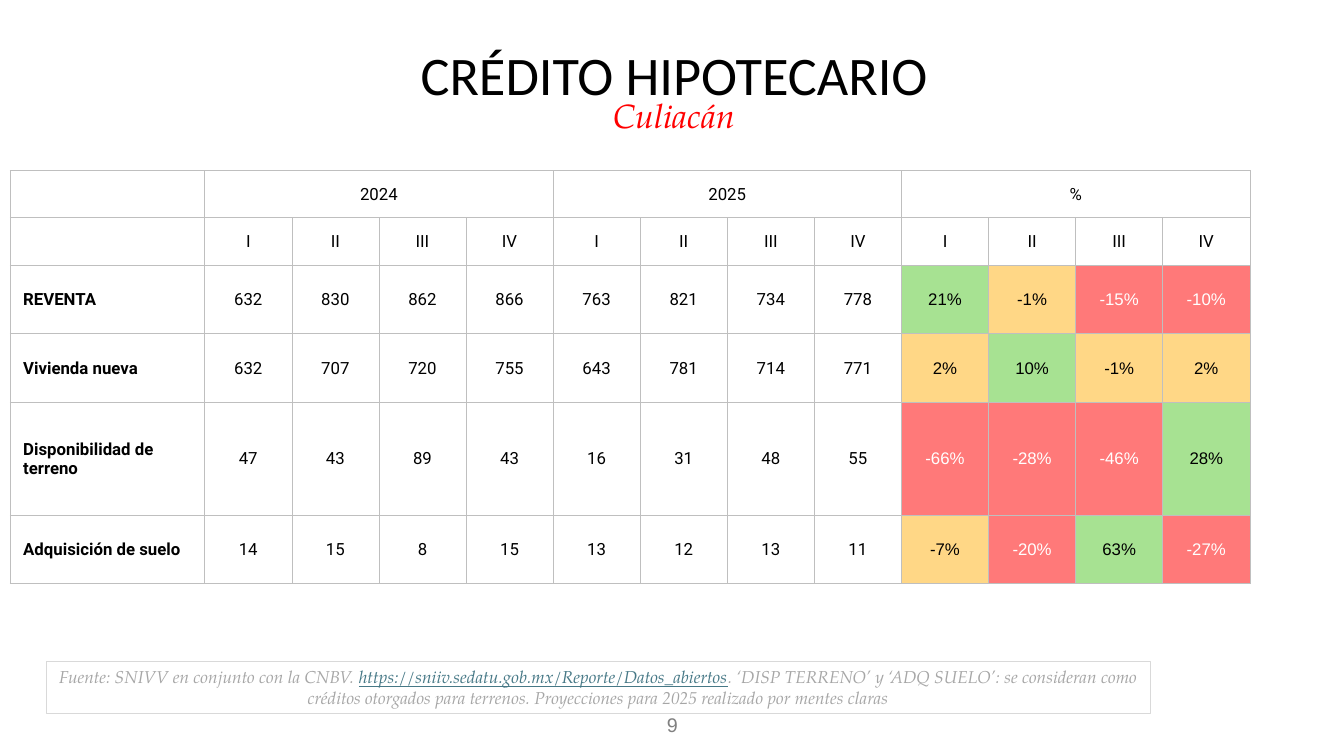
from itertools import product
from math import floor

from lxml.etree import SubElement
from pptx import Presentation
from pptx.dml.color import RGBColor
from pptx.enum.shapes import MSO_SHAPE
from pptx.enum.text import MSO_ANCHOR, PP_ALIGN
from pptx.oxml.ns import qn
from pptx.util import Inches, Pt

QUARTERS = ["I", "II", "III", "IV"]
GROUPS = ["2024", "2025", "%"]
CREDITS = {
    "REVENTA": ([632, 830, 862, 866], [763, 821, 734, 778]),
    "Vivienda nueva": ([632, 707, 720, 755], [643, 781, 714, 771]),
    "Disponibilidad de terreno": ([47, 43, 89, 43], [16, 31, 48, 55]),
    "Adquisición de suelo": ([14, 15, 8, 15], [13, 12, 13, 11]),
}
ROW_HEIGHTS = [0.47, 0.47, 0.68, 0.68, 1.12, 0.68]
LABEL_SHARE = 0.157
BLACK, WHITE, BORDER = "000000", "FFFFFF", "BFBFBF"
SERIF = {"name": "TeX Gyre Pagella", "italic": True}


def rgb(code):
    """Turn a hex string into a colour."""
    return RGBColor.from_string(code)


def add_run(paragraph, wording, color, **formats):
    """Append a run with the given colour and font attributes."""
    run = paragraph.add_run()
    run.text = wording
    run.font.color.rgb = rgb(color)
    for attribute, value in formats.items():
        setattr(run.font, attribute, value)


def add_line(slide, box, runs, anchor=MSO_ANCHOR.TOP, margins=(0.1, 0.05, 0.1, 0.05),
             spacing=1.0, border=None):
    """Place a centred paragraph in a box, outlined if a border is given."""
    frame_box = slide.shapes.add_shape(MSO_SHAPE.RECTANGLE, *map(Inches, box))
    frame_box.shadow.inherit = False
    frame_box.fill.background()
    if border:
        frame_box.line.color.rgb = rgb(border)
        frame_box.line.width = Pt(0.75)
    else:
        frame_box.line.fill.background()
    frame = frame_box.text_frame
    settings = dict(zip(("margin_left", "margin_top", "margin_right", "margin_bottom"),
                        map(Inches, margins)), word_wrap=True, vertical_anchor=anchor)
    for attribute, value in settings.items():
        setattr(frame, attribute, value)
    paragraph = frame.paragraphs[0]
    paragraph.alignment = PP_ALIGN.CENTER
    paragraph.line_spacing = spacing
    for wording, color, formats in runs:
        add_run(paragraph, wording, color, **formats)


def add_heading(slide, left, top, width):
    """Place the title and the city beneath it."""
    add_line(slide, (left, top, width, 0.57),
             [("CRÉDITO HIPOTECARIO", BLACK, {"name": "Calibri", "size": Pt(38.8)})],
             margins=(0.11, 0.06, 0.11, 0.06), spacing=0.7)
    add_line(slide, (left, top + 0.36, width, 0.5),
             [("Culiacán", "FF0000", {**SERIF, "size": Pt(24)})])


def border_cell(cell):
    """Draw a thin grey line on each side of a cell."""
    properties = cell._tc.get_or_add_tcPr()
    for side in ("a:lnL", "a:lnR", "a:lnT", "a:lnB"):
        line = SubElement(properties, qn(side), w=str(Pt(0.5)))
        SubElement(SubElement(line, qn("a:solidFill")), qn("a:srgbClr"), val=BORDER)


def fill_cell(cell, wording, color=BLACK, align=PP_ALIGN.CENTER, left=0.01, **formats):
    """Write a cell's wording, centred vertically."""
    settings = {"margin_left": Inches(left), "margin_top": Inches(0.01),
                "margin_right": Inches(0.01), "margin_bottom": 0,
                "vertical_anchor": MSO_ANCHOR.MIDDLE}
    for attribute, value in settings.items():
        setattr(cell, attribute, value)
    paragraph = cell.text_frame.paragraphs[0]
    paragraph.alignment = align
    add_run(paragraph, wording, color, **{"name": "Roboto", "size": Pt(12), **formats})


def change_style(change):
    """Give the fill and text colours for a percentage change."""
    if change >= 10:
        return "A7E292", BLACK
    if change <= -10:
        return "FF7979", WHITE
    return "FFD786", BLACK


def add_credit_table(slide, left, top, width):
    """Place the quarterly credits with their yearly change."""
    columns = 1 + len(GROUPS) * len(QUARTERS)
    table = slide.shapes.add_table(len(ROW_HEIGHTS), columns, *map(
        Inches, (left, top, width, sum(ROW_HEIGHTS)))).table
    table.first_row = table.horz_banding = False
    quarter_width = width * (1 - LABEL_SHARE) / (columns - 1)
    for index, column in enumerate(table.columns):
        column.width = Inches(quarter_width if index else width * LABEL_SHARE)
    for row, height in zip(table.rows, ROW_HEIGHTS):
        row.height = Inches(height)
    for row, column in product(range(len(ROW_HEIGHTS)), range(columns)):
        border_cell(table.cell(row, column))
        table.cell(row, column).fill.background()

    for group, heading in enumerate(GROUPS):
        first = 1 + group * len(QUARTERS)
        table.cell(0, first).merge(table.cell(0, first + len(QUARTERS) - 1))
        fill_cell(table.cell(0, first), heading)
        for offset, quarter in enumerate(QUARTERS):
            fill_cell(table.cell(1, first + offset), quarter)

    for row, (label, (before, after)) in enumerate(CREDITS.items(), 2):
        fill_cell(table.cell(row, 0), label, align=PP_ALIGN.LEFT, left=0.13, bold=True)
        for column, credits in enumerate(before + after, 1):
            fill_cell(table.cell(row, column), str(credits))
        for column, (old, new) in enumerate(zip(before, after), 1 + 2 * len(QUARTERS)):
            change = floor(100 * (new - old) / old + 0.5)
            background, color = change_style(change)
            cell = table.cell(row, column)
            cell.fill.solid()
            cell.fill.fore_color.rgb = rgb(background)
            fill_cell(cell, f"{change}%", color, name="Arial")


def add_footer(slide, left, top, width):
    """Place the source note and the page number."""
    note = {**SERIF, "size": Pt(12.3)}
    grey = "A6A6A6"
    add_line(slide, (left, top, width, 0.52), [
        ("Fuente: SNIVV en conjunto con la CNBV. ", grey, note),
        ("https://sniiv.sedatu.gob.mx/Reporte/Datos_abiertos", "467886",
         {**note, "underline": True}),
        (". ‘DISP TERRENO’ y ‘ADQ SUELO’: se consideran como créditos otorgados para "
         "terrenos. Proyecciones para 2025 realizado por mentes claras", grey, note),
    ], border="D9D9D9")
    add_line(slide, (6.13, top + 0.52, 1.07, 0.24),
             [("9", "808080", {"name": "Arial", "size": Pt(14.1)})],
             anchor=MSO_ANCHOR.MIDDLE, margins=(0.1, 0.02, 0.09, 0.05))


def main():
    """Build the slide and save it."""
    deck = Presentation()
    deck.slide_width, deck.slide_height = Inches(13.33), Inches(7.5)
    slide = deck.slides.add_slide(deck.slide_layouts[6])
    add_heading(slide, 0.97, 0.53, 11.43)
    add_footer(slide, 0.46, 6.56, 10.95)
    add_credit_table(slide, 0.1, 1.69, 12.3)
    deck.save("out.pptx")


if __name__ == "__main__":
    main()
